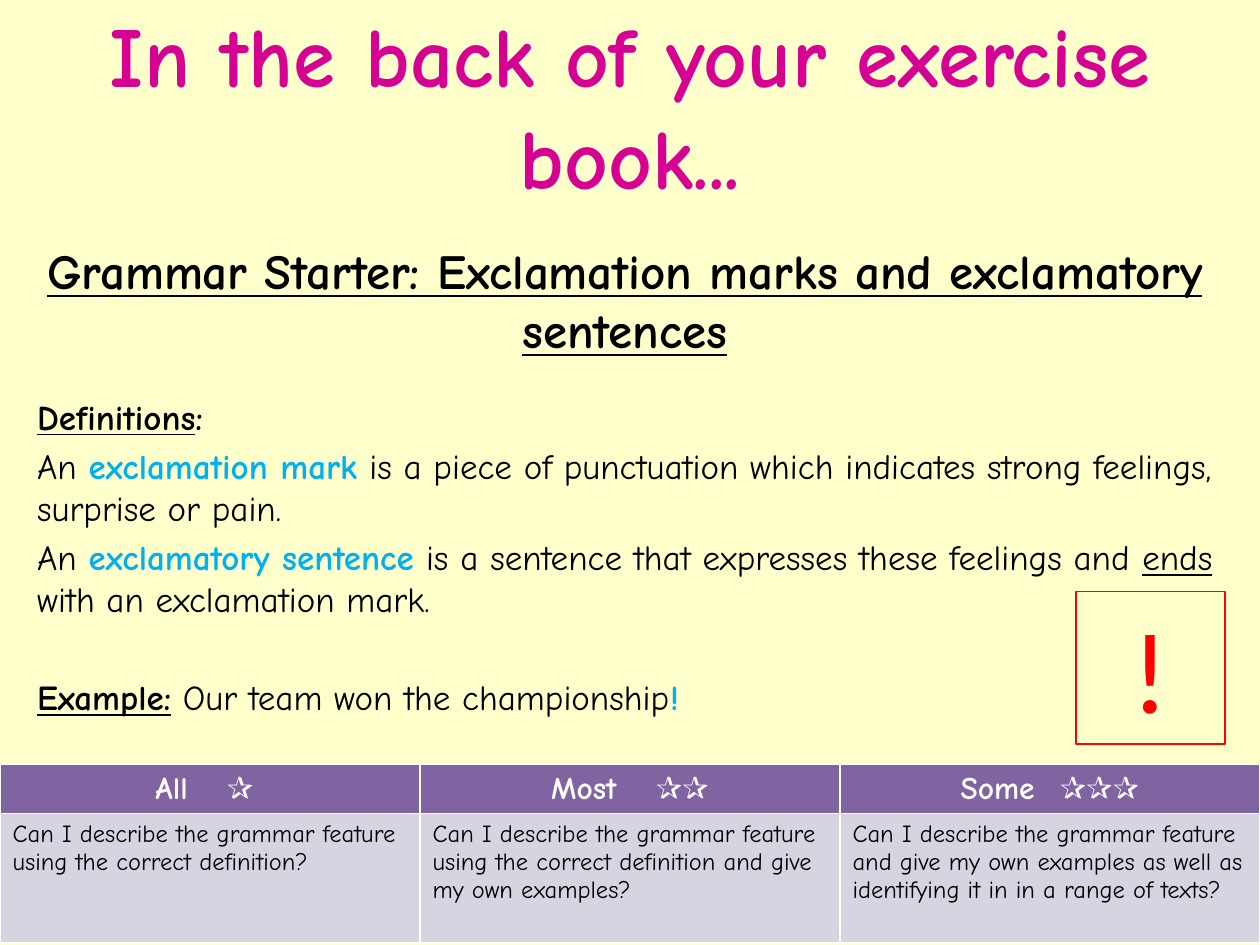
from dataclasses import dataclass

from lxml.etree import SubElement
from pptx import Presentation
from pptx.dml.color import RGBColor
from pptx.enum.shapes import MSO_SHAPE
from pptx.enum.text import MSO_ANCHOR, MSO_AUTO_SIZE, PP_ALIGN
from pptx.oxml.ns import qn
from pptx.util import Pt


@dataclass(frozen=True)
class Theme:
    font: str = "Comic Neue"
    mark_font: str = "Calibri"
    page: str = "FFFFCC"
    title: str = "D60093"
    ink: str = "000000"
    term: str = "00B0F0"
    mark: str = "FF0000"
    head: str = "8064A2"
    light: str = "FFFFFF"
    cell: str = "D8D3E0"
    title_size: float = 48.6
    topic_size: float = 28
    text_size: float = 20
    head_size: float = 18
    cell_size: float = 14
    mark_size: float = 66


THEME = Theme()
BOLD = {"bold": True}
LINED = {"underline": True}
HEAD = BOLD | LINED
TERM = BOLD | {"color": THEME.term}

# Each paragraph: space before, then (text, format) runs.
LINES = [
    (21, [("Definitions", HEAD), (":", BOLD)]),
    (4, [("An ", {}), ("exclamation mark", TERM),
         (" is a piece of punctuation which indicates strong feelings, "
          "surprise or pain.", {})]),
    (4, [("An ", {}), ("exclamatory sentence", TERM),
         (" is a sentence that expresses these feelings and ", {}),
         ("ends", LINED), (" with an exclamation mark.", {})]),
    (32, [("Example:", HEAD), (" Our team won the championship", {}),
          ("!", TERM)]),
]

# Each goal: level, extra gap before the stars, stars, question.
GOALS = [
    ("All", 16, "✰ ", "Can I describe the grammar feature using the "
     "correct definition?"),
    ("Most", 16, "✰✰", "Can I describe the grammar feature using the "
     "correct definition and give my own examples?"),
    ("Some", 8, "✰✰✰", "Can I describe the grammar feature and give my own "
     "examples as well as identifying it in in a range of texts?"),
]


def write(para, text, size=THEME.text_size, color=THEME.ink, font=THEME.font,
          bold=False, underline=False, gap=0):
    """Add a run; gap is extra letter spacing in points."""
    run = para.add_run()
    run.text = text
    style = run.font
    style.size, style.name = Pt(size), font
    style.bold, style.underline = bold, underline
    style.color.rgb = RGBColor.from_string(color)
    if gap:
        run._r.get_or_add_rPr().set("spc", str(gap * 100))


def place(shape, box):
    shape.left, shape.top, shape.width, shape.height = map(Pt, box)


def paint(fill, color):
    fill.solid()
    fill.fore_color.rgb = RGBColor.from_string(color)


def add_title(slide, box):
    shape = slide.shapes.title
    place(shape, box)
    frame = shape.text_frame
    frame.auto_size = MSO_AUTO_SIZE.NONE
    frame.vertical_anchor = MSO_ANCHOR.MIDDLE
    para = frame.paragraphs[0]
    para.alignment = PP_ALIGN.CENTER
    write(para, "In the back of your exercise book...", bold=True,
          size=THEME.title_size, color=THEME.title)


def add_body(slide, box):
    shape = slide.placeholders[1]
    place(shape, box)
    frame = shape.text_frame
    frame.auto_size = MSO_AUTO_SIZE.NONE
    para = frame.paragraphs[0]
    para.alignment = PP_ALIGN.CENTER
    para.space_before = Pt(5.6)
    write(para, "Grammar Starter: Exclamation marks and exclamatory sentences",
          size=THEME.topic_size, **HEAD)
    for space, runs in LINES:
        para = frame.add_paragraph()
        para.alignment = PP_ALIGN.JUSTIFY
        para.space_before = Pt(space)
        for text, style in runs:
            write(para, text, **style)
    for para in frame.paragraphs:
        props = para._p.get_or_add_pPr()
        props.set("marL", "0")
        props.set("indent", "0")
        SubElement(props, qn("a:buNone"))


def add_goals(slide, box):
    table = slide.shapes.add_table(2, len(GOALS), *map(Pt, box)).table
    table.rows[0].height = Pt(24)
    table.rows[1].height = Pt(box[3] - 24)
    for col, (level, gap, stars, ask) in enumerate(GOALS):
        head, cell = table.cell(0, col), table.cell(1, col)
        paint(head.fill, THEME.head)
        paint(cell.fill, THEME.cell)
        para = head.text_frame.paragraphs[0]
        para.alignment = PP_ALIGN.CENTER
        style = {"size": THEME.head_size, "color": THEME.light, "bold": True}
        write(para, level, **style)
        write(para, " ", gap=gap, **style)
        write(para, stars, **style)
        write(cell.text_frame.paragraphs[0], ask, size=THEME.cell_size)


def add_mark(slide, box):
    shape = slide.shapes.add_shape(MSO_SHAPE.RECTANGLE, *map(Pt, box))
    shape.shadow.inherit = False
    shape.fill.background()
    paint(shape.line.fill, THEME.mark)
    shape.line.width = Pt(1)
    frame = shape.text_frame
    frame.word_wrap = True
    frame.auto_size = MSO_AUTO_SIZE.SHAPE_TO_FIT_TEXT
    frame.vertical_anchor = MSO_ANCHOR.TOP
    para = frame.paragraphs[0]
    para.alignment = PP_ALIGN.CENTER
    write(para, "!", size=THEME.mark_size, color=THEME.mark,
          font=THEME.mark_font)


def main():
    deck = Presentation()
    deck.slide_width, deck.slide_height = Pt(720), Pt(540)
    slide = deck.slides.add_slide(deck.slide_layouts[1])
    paint(slide.background.fill, THEME.page)
    add_title(slide, (0, 1.5, 720, 116))
    add_body(slide, (14, 134, 686, 348.5))
    add_goals(slide, (0, 437, 720, 98))
    add_mark(slide, (615, 338, 85, 87))
    deck.save("out.pptx")


if __name__ == "__main__":
    main()
